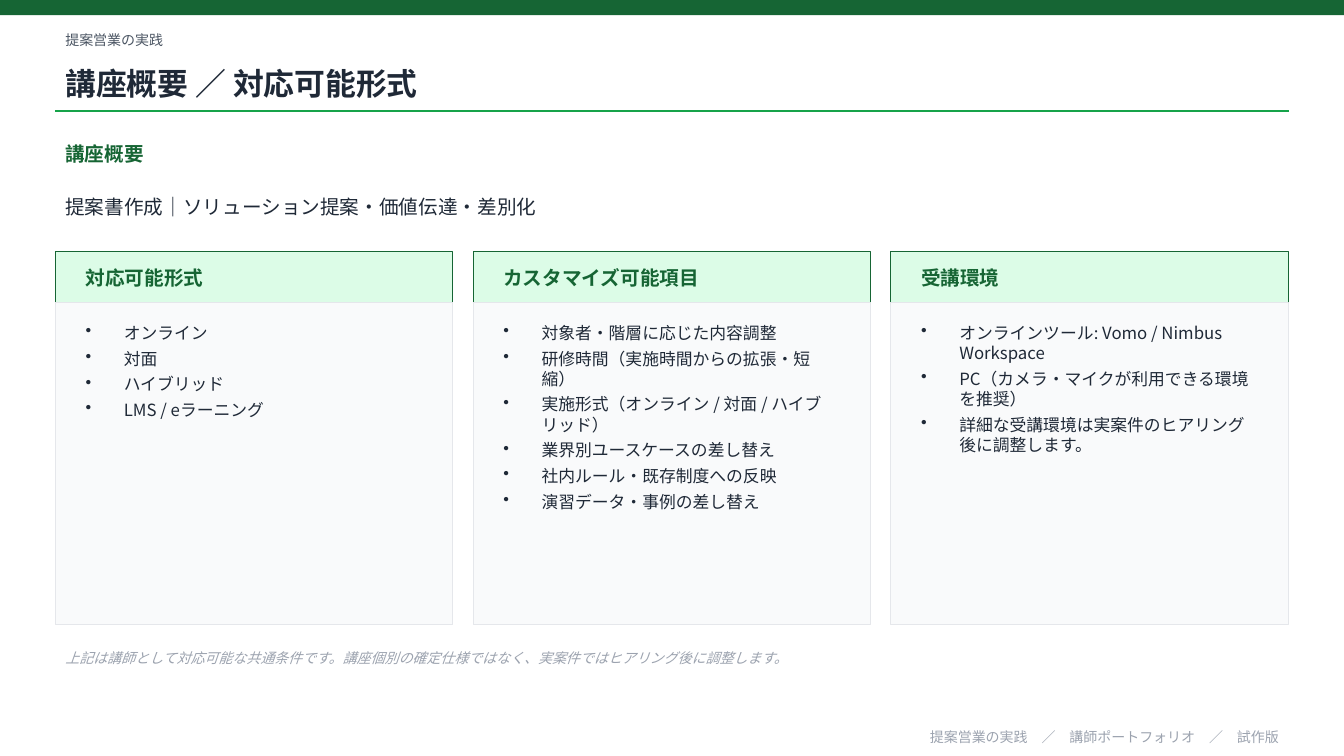
from lxml import etree
from pptx import Presentation
from pptx import util as u
from pptx.dml.color import RGBColor
from pptx.enum import shapes, text
from pptx.oxml.ns import qn

COLORS = {
    "green": "166534",
    "accent": "16A34A",
    "mint": "DCFCE7",
    "panel": "F9FAFB",
    "border": "E5E7EB",
    "ink": "1F2937",
    "gray": "4B5563",
    "muted": "9CA3AF",
}

CARDS = [
    ("対応可能形式", ["オンライン", "対面", "ハイブリッド", "LMS / eラーニング"]),
    ("カスタマイズ可能項目", [
        "対象者・階層に応じた内容調整",
        "研修時間（実施時間からの拡張・短縮）",
        "実施形式（オンライン / 対面 / ハイブリッド）",
        "業界別ユースケースの差し替え",
        "社内ルール・既存制度への反映",
        "演習データ・事例の差し替え",
    ]),
    ("受講環境", [
        "オンラインツール: Vomo / Nimbus Workspace",
        "PC（カメラ・マイクが利用できる環境を推奨）",
        "詳細な受講環境は実案件のヒアリング後に調整します。",
    ]),
]


class SlideBuilder:
    font = "Noto Sans CJK JP"
    indent = u.Inches(0.38)

    def __init__(self, page):
        self.page = page

    def color(self, name):
        return RGBColor.from_string(COLORS[name])

    def rect(self, left, top, width, height, fill, line=None):
        box = self.page.shapes.add_shape(
            shapes.MSO_SHAPE.RECTANGLE, u.Inches(left), u.Inches(top),
            u.Inches(width), u.Inches(height))
        box.shadow.inherit = False
        box.fill.solid()
        box.fill.fore_color.rgb = self.color(fill)
        if line:
            box.line.color.rgb = self.color(line)
            box.line.width = u.Pt(0.75)
        else:
            box.line.fill.background()

    def rule(self, left, right, top, color):
        line = self.page.shapes.add_connector(
            shapes.MSO_CONNECTOR.STRAIGHT, u.Inches(left), u.Inches(top),
            u.Inches(right), u.Inches(top))
        line.line.color.rgb = self.color(color)
        line.line.width = u.Pt(1)
        etree.SubElement(line._element.spPr, qn("a:effectLst"))

    def label(self, left, top, width, height, words, size, color,
              bold=None, italic=None, align=None, bullets=False):
        box = self.page.shapes.add_textbox(
            u.Inches(left), u.Inches(top), u.Inches(width), u.Inches(height))
        frame = box.text_frame
        frame.word_wrap = True
        frame.vertical_anchor = (
            text.MSO_ANCHOR.TOP if bullets else text.MSO_ANCHOR.MIDDLE)
        frame.text = words
        for para in frame.paragraphs:
            if bullets:
                self.bullet(para)
            if align:
                para.alignment = align
            for span in para.runs:
                span.font.name = self.font
                span.font.size = u.Pt(size)
                span.font.bold = bold
                span.font.italic = italic
                span.font.color.rgb = self.color(color)
                east_asian = etree.SubElement(span.font._element, qn("a:ea"))
                east_asian.set("typeface", self.font)

    def bullet(self, para):
        properties = para._p.get_or_add_pPr()
        properties.set("marL", str(self.indent))
        properties.set("indent", str(-self.indent))
        etree.SubElement(properties, qn("a:buChar")).set("char", "•")
        para.space_after = u.Pt(4)

    def card(self, left, width, heading, items):
        pad = 0.2
        inner = width - 2 * pad
        self.rect(left, 2.5, width, 0.5, "mint", "green")
        self.label(left + pad, 2.5, inner, 0.5, heading, 14, "green", bold=True)
        self.rect(left, 3, width, 3.2, "panel", "border")
        self.label(left + pad, 3.15, inner, 2.85, "\n".join(items), 12, "ink",
                   bullets=True)


def main():
    deck = Presentation()
    deck.slide_width = u.Inches(13.33)
    deck.slide_height = u.Inches(7.5)
    builder = SlideBuilder(deck.slides.add_slide(deck.slide_layouts[6]))
    left, width, gap = 0.55, 12.23, 0.2

    # Header
    builder.rect(0, 0, 13.33, 0.15, "green")
    builder.label(left, 0.25, width, 0.3, "提案営業の実践", 10, "gray")
    builder.label(left, 0.55, width, 0.55, "講座概要 ／ 対応可能形式", 22, "ink",
                  bold=True)
    builder.rule(left, left + width, 1.1, "accent")

    # Course outline
    builder.label(left, 1.35, width, 0.35, "講座概要", 14, "green", bold=True)
    builder.label(left, 1.75, width, 0.6,
                  "提案書作成｜ソリューション提案・価値伝達・差別化", 14, "ink")

    # Three equal cards
    card_width = (width - gap * (len(CARDS) - 1)) / len(CARDS)
    for index, (heading, items) in enumerate(CARDS):
        builder.card(left + index * (card_width + gap), card_width, heading, items)

    # Note and footer
    builder.label(
        left, 6.35, width, 0.35,
        "上記は講師として対応可能な共通条件です。"
        "講座個別の確定仕様ではなく、実案件ではヒアリング後に調整します。",
        10, "muted", italic=True)
    builder.label(left, 7.2, width, 0.22,
                  "提案営業の実践　／　講師ポートフォリオ　／　試作版", 10, "muted",
                  align=text.PP_ALIGN.RIGHT)

    deck.save("out.pptx")


if __name__ == "__main__":
    main()
